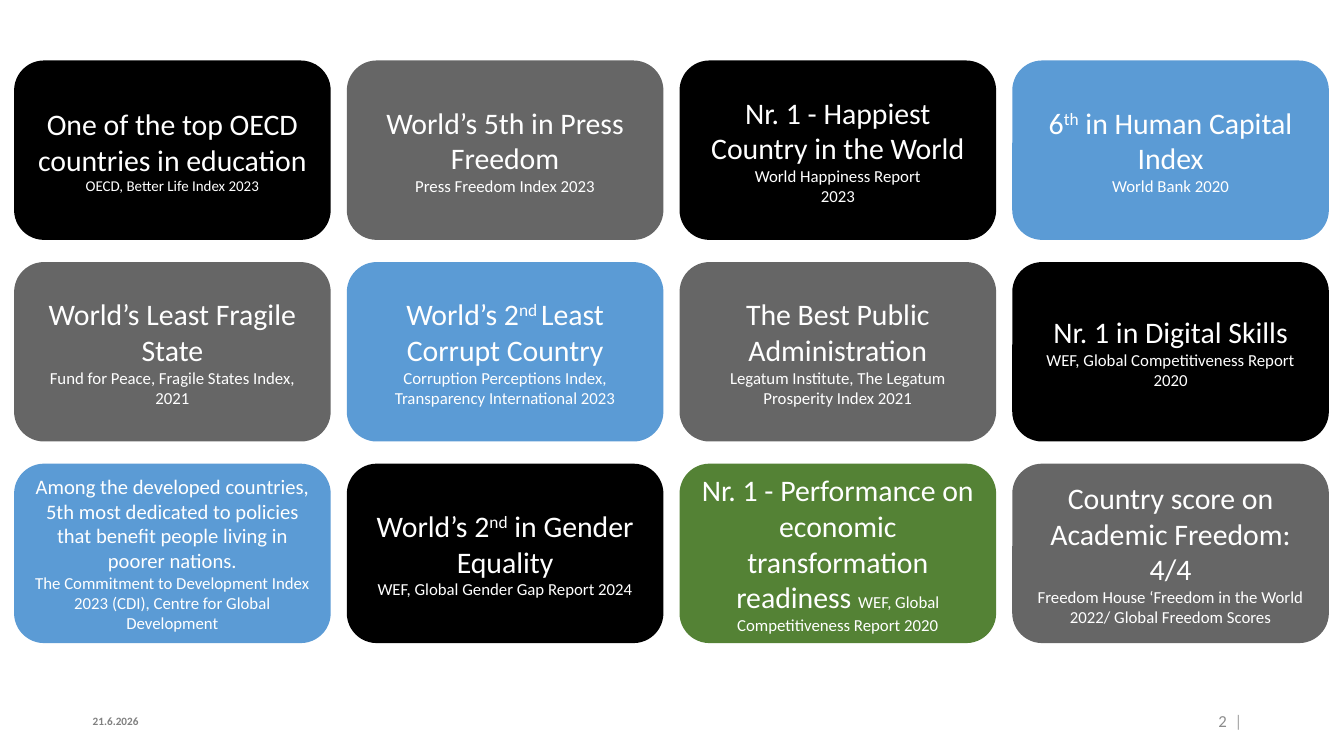
from dataclasses import dataclass

import pptx
import pptx.dml.color
import pptx.enum.shapes
import pptx.enum.text
import pptx.util

Inches = pptx.util.Inches
ALIGN = pptx.enum.text.PP_ALIGN
BLACK, GREY, BLUE, GREEN, WHITE = "000000", "666666", "5B9BD5", "548235", "FFFFFF"
BIG, MID, SMALL, TINY = 21.3, 14.7, 12, 10.7
LEFT, TOP, WIDE, HIGH = 0.14, 0.6, 3.14, 1.78
STEP_X, STEP_Y, COLS = 3.3, 2, 4


@dataclass
class Run:
    text: str
    size: float = BIG
    color: str = WHITE
    bold: bool = False
    raised: bool = False


@dataclass
class Card:
    fill: str
    lines: list[list[Run]]


@dataclass
class Note:
    left: float
    align: ALIGN
    inset: float
    runs: list[Run]


def paint(code: str) -> pptx.dml.color.RGBColor:
    return pptx.dml.color.RGBColor.from_string(code)


def fact(fill: str, title: str, *notes: str, size: float = BIG, small: float = SMALL) -> Card:
    return Card(fill, [[Run(title, size)]] + [[Run(note, small)] for note in notes])


def rank(fill: str, start: str, mark: str, rest: str, *notes: str) -> Card:
    head = [Run(start), Run(mark, raised=True), Run(rest)]
    return Card(fill, [head] + [[Run(note, SMALL)] for note in notes])


CARDS = [
    fact(BLACK, "One of the top OECD countries in education",
         "OECD, Better Life Index 2023", small=TINY),
    fact(GREY, "World’s 5th in Press Freedom", "Press Freedom Index 2023"),
    fact(BLACK, "Nr. 1 - Happiest Country in the World",
         "World Happiness Report", "2023"),
    rank(BLUE, "6", "th", " in Human Capital Index", "World Bank 2020"),
    fact(GREY, "World’s Least Fragile State",
         "Fund for Peace, Fragile States Index, 2021"),
    rank(BLUE, "World’s 2", "nd ", "Least Corrupt Country",
         "Corruption Perceptions Index,", "Transparency International 2023"),
    fact(GREY, "The Best Public Administration",
         "Legatum Institute, The Legatum Prosperity Index 2021"),
    fact(BLACK, "Nr. 1 in Digital Skills", "WEF, Global Competitiveness Report 2020"),
    fact(BLUE, "Among the developed countries, 5th most dedicated to policies "
         "that benefit people living in poorer nations.",
         "The Commitment to Development Index 2023 (CDI), "
         "Centre for Global Development", size=MID),
    rank(BLACK, "World’s 2", "nd", " in Gender Equality",
         "WEF, Global Gender Gap Report 2024"),
    Card(GREEN, [[Run("Nr. 1 - Performance on economic transformation readiness "),
                  Run("WEF, Global Competitiveness Report 2020", SMALL)]]),
    fact(GREY, "Country score on Academic Freedom: 4/4",
         "Freedom House ‘Freedom in the World 2022/ Global Freedom Scores"),
]

NOTES = [
    Note(0.92, ALIGN.LEFT, 0, [Run("21.6.2026", 8, "808080", True)]),
    Note(9.42, ALIGN.RIGHT, 0.1, [Run("2  ", 12, "8C8C8C"), Run("|", 12, "A6A6A6")]),
]


def write(frame, lines: list[list[Run]], align: ALIGN) -> None:
    frame.word_wrap = True
    frame.vertical_anchor = pptx.enum.text.MSO_ANCHOR.MIDDLE
    for row, line in enumerate(lines):
        para = frame.add_paragraph() if row else frame.paragraphs[0]
        para.alignment = align
        for item in line:
            run = para.add_run()
            run.text = item.text
            style = {"name": "Calibri", "size": pptx.util.Pt(item.size), "bold": item.bold}
            for key, value in style.items():
                setattr(run.font, key, value)
            run.font.color.rgb = paint(item.color)
            if item.raised:
                run._r.get_or_add_rPr().set("baseline", "30000")


def draw_card(slide, card: Card, index: int) -> None:
    row, col = divmod(index, COLS)
    box = slide.shapes.add_shape(
        pptx.enum.shapes.MSO_SHAPE.ROUNDED_RECTANGLE,
        Inches(LEFT + col * STEP_X), Inches(TOP + row * STEP_Y),
        Inches(WIDE), Inches(HIGH))
    box.shadow.inherit = False
    box.fill.solid()
    box.fill.fore_color.rgb = paint(card.fill)
    box.line.fill.background()
    write(box.text_frame, card.lines, ALIGN.CENTER)


def draw_note(slide, note: Note) -> None:
    box = slide.shapes.add_textbox(Inches(note.left), Inches(6.95), Inches(3), Inches(0.4))
    frame = box.text_frame
    inset = Inches(note.inset)
    edges = {"margin_left": inset, "margin_right": inset,
             "margin_top": inset // 2, "margin_bottom": inset // 2}
    for key, value in edges.items():
        setattr(frame, key, value)
    write(frame, [note.runs], note.align)


def main() -> None:
    deck = pptx.Presentation()
    deck.slide_width, deck.slide_height = Inches(13.33), Inches(7.5)
    slide = deck.slides.add_slide(deck.slide_layouts[6])
    for note in NOTES:
        draw_note(slide, note)
    for index, card in enumerate(CARDS):
        draw_card(slide, card, index)
    deck.save("out.pptx")


if __name__ == "__main__":
    main()
